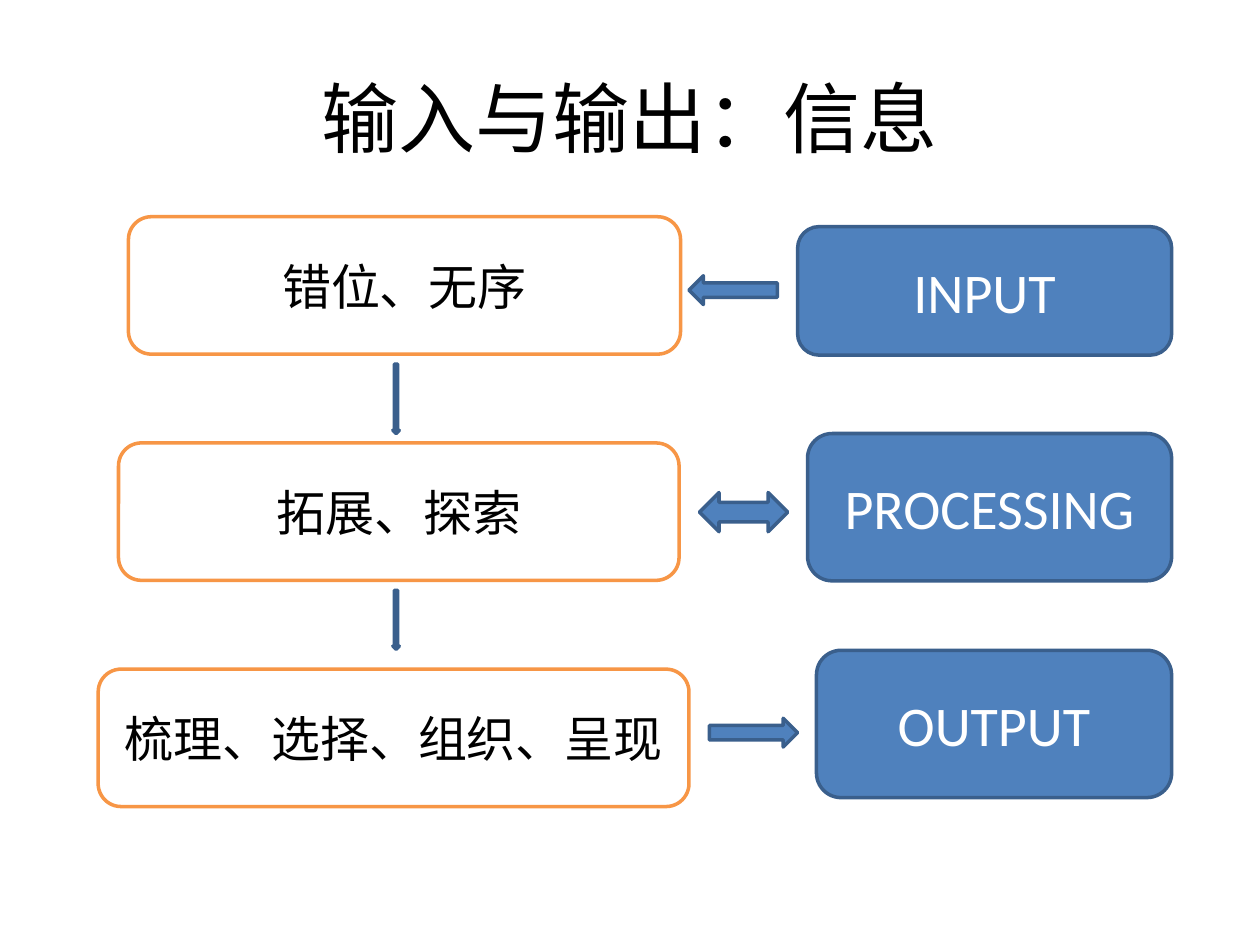
from pptx import Presentation
from pptx.dml.color import RGBColor
from pptx.enum.shapes import MSO_SHAPE
from pptx.enum.text import MSO_ANCHOR, PP_ALIGN
from pptx.util import Cm, Pt

ROUNDED = MSO_SHAPE.ROUNDED_RECTANGLE
DOWN = MSO_SHAPE.DOWN_ARROW
MIDDLE = MSO_ANCHOR.MIDDLE
CENTER = PP_ALIGN.CENTER

COLORS = {
    "black": "000000",
    "white": "FFFFFF",
    "orange": "F79646",
    "blue": "4F81BD",
    "navy": "3A5F8C",
}
FONT = "Calibri"
TITLE = "输入与输出：信息"

STAGES = [
    {"text": "错位、无序", "left": 2.59, "width": 11.13,
     "label": "INPUT", "label_box": (16.08, 4.57, 2.59),
     "arrow": MSO_SHAPE.LEFT_ARROW, "arrow_box": (13.89, 5.56, 0.58),
     "down_length": 1.4},
    {"text": "拓展、探索", "left": 2.39, "width": 11.3,
     "label": "PROCESSING", "label_box": (16.28, 8.74, 2.97),
     "arrow": MSO_SHAPE.LEFT_RIGHT_ARROW, "arrow_box": (14.1, 9.93, 0.79),
     "down_length": 1.19},
    {"text": "梳理、选择、组织、呈现", "left": 1.98, "width": 11.91,
     "label": "OUTPUT", "label_box": (16.46, 13.11, 2.97),
     "arrow": MSO_SHAPE.RIGHT_ARROW, "arrow_box": (14.3, 14.48, 0.58),
     "down_length": None},
]
STAGE_TOP, STAGE_STEP, STAGE_HEIGHT = 4.37, 4.56, 2.77
LABEL_RIGHT = 23.62
ARROW_WIDTH = 1.78
DOWN_LEFT, DOWN_WIDTH, DOWN_GAP = 7.92, 0.13, 0.2


def color(name):
    return RGBColor.from_string(COLORS[name])


def write(shape, text, size, text_color):
    frame = shape.text_frame
    frame.word_wrap = True
    frame.vertical_anchor = MIDDLE
    paragraph = frame.paragraphs[0]
    paragraph.text = text
    paragraph.alignment = CENTER
    paragraph.font.name = FONT
    paragraph.font.size = Pt(size)
    paragraph.font.color.rgb = color(text_color)


def add_block(slide, kind, left, top, width, height, fill="blue", line="navy"):
    shape = slide.shapes.add_shape(kind, Cm(left), Cm(top), Cm(width), Cm(height))
    shape.shadow.inherit = False
    shape.fill.solid()
    shape.fill.fore_color.rgb = color(fill)
    shape.line.color.rgb = color(line)
    shape.line.width = Pt(2)
    return shape


def add_stage(slide, index, stage):
    top = STAGE_TOP + index * STAGE_STEP
    box = add_block(slide, ROUNDED, stage["left"], top, stage["width"],
                    STAGE_HEIGHT, "white", "orange")
    write(box, stage["text"], 28, "black")

    left, label_top, height = stage["label_box"]
    label = add_block(slide, ROUNDED, left, label_top, LABEL_RIGHT - left, height)
    write(label, stage["label"], 32, "white")

    left, arrow_top, height = stage["arrow_box"]
    add_block(slide, stage["arrow"], left, arrow_top, ARROW_WIDTH, height)

    if stage["down_length"]:
        add_block(slide, DOWN, DOWN_LEFT, top + STAGE_HEIGHT + DOWN_GAP,
                  DOWN_WIDTH, stage["down_length"])


def main():
    presentation = Presentation()
    presentation.slide_width = Cm(25.4)
    presentation.slide_height = Cm(19.05)
    slide = presentation.slides.add_slide(presentation.slide_layouts[6])
    title = slide.shapes.add_textbox(Cm(1.27), Cm(0.76), Cm(22.86), Cm(3.18))
    write(title, TITLE, 44, "black")
    for index, stage in enumerate(STAGES):
        add_stage(slide, index, stage)
    presentation.save("out.pptx")


if __name__ == "__main__":
    main()
